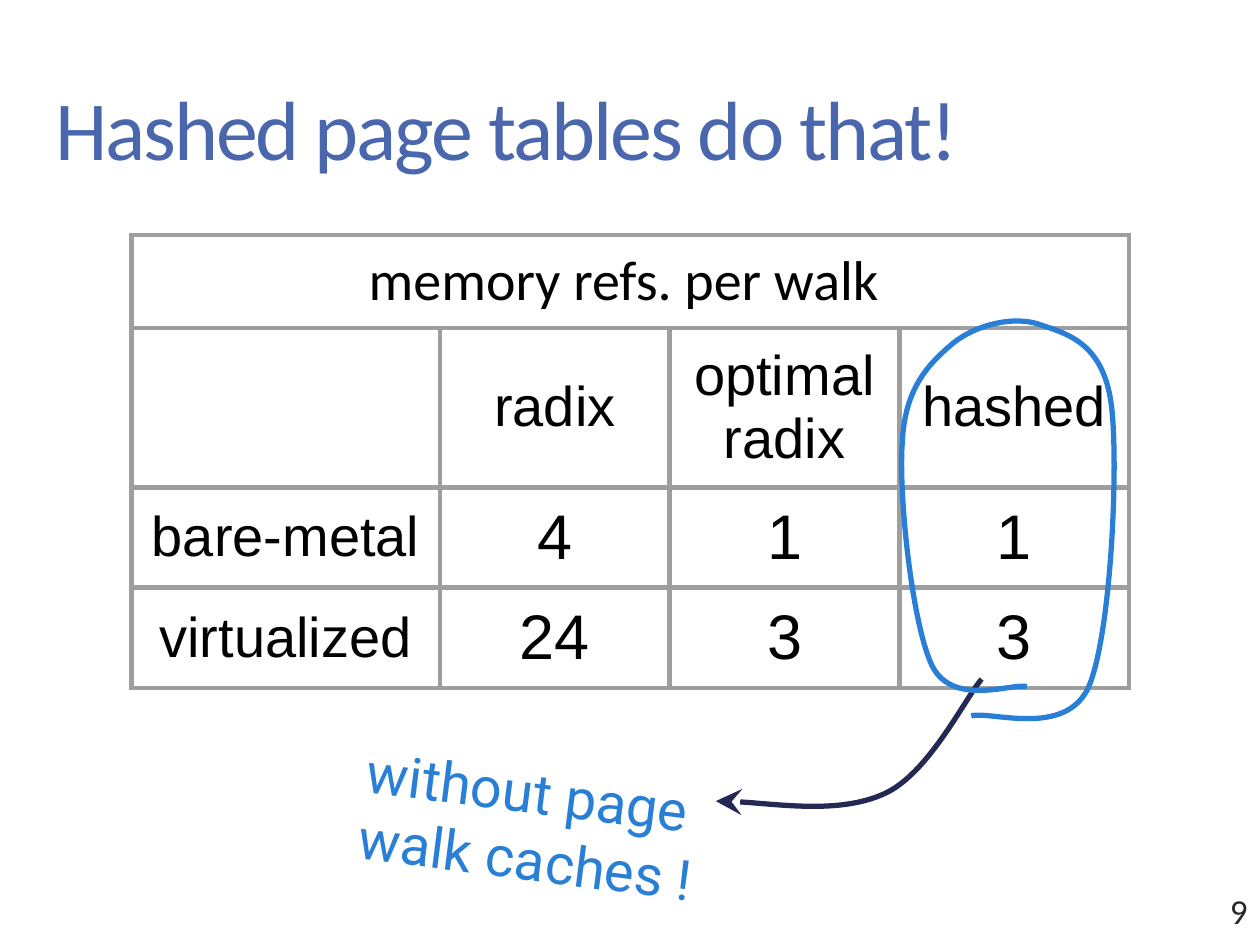
from lxml import etree
from pptx import Presentation
from pptx import util as u
from pptx.dml.color import RGBColor
from pptx.enum import text
from pptx.oxml import ns

CENTER, RIGHT = text.PP_ALIGN.CENTER, text.PP_ALIGN.RIGHT
MIDDLE = text.MSO_ANCHOR.MIDDLE
BLUE, NAVY, GREY = "297FD5", "242852", "9E9E9E"
INSET = u.Cm(0.25)


def write(frame, lines, size, font="Calibri", colour="000000", align=None,
          line_spacing=None, tracking=None):
    """Fill a text frame, one paragraph per line; tracking is in 1/100 pt."""
    frame.word_wrap = True
    for index, line in enumerate(lines.split("\n")):
        paragraph = frame.add_paragraph() if index else frame.paragraphs[0]
        paragraph.alignment = align
        paragraph.line_spacing = line_spacing
        run = paragraph.add_run()
        run.text = line
        run.font.size = u.Pt(size)
        run.font.name = font
        run.font.color.rgb = RGBColor.from_string(colour)
        if tracking:
            run.font._element.set("spc", str(tracking))


def draw_curve(shapes, points, colour):
    """Draw an open Bezier line: a start, then three points per segment, in cm."""
    grid = [(round(x * 100), round(y * 100)) for x, y in points]
    builder = shapes.build_freeform(*grid[0], scale=u.Cm(0.01))
    builder.add_line_segments(grid[1:], close=False)
    shape = builder.convert_to_shape()
    outline = next(shape._element.iter(ns.qn("a:path")))
    lines = outline.findall(ns.qn("a:lnTo"))
    for first in range(0, len(lines), 3):
        curve = etree.SubElement(outline, ns.qn("a:cubicBezTo"))
        for line in lines[first:first + 3]:
            curve.append(line[0])
            outline.remove(line)
    shape.shadow.inherit = False
    shape.fill.background()
    shape.line.color.rgb = RGBColor.from_string(colour)
    shape.line.width = u.Pt(3)
    return shape


presentation = Presentation()
presentation.slide_width, presentation.slide_height = u.Cm(25.4), u.Cm(19.05)
slide = presentation.slides.add_slide(presentation.slide_layouts[6])
shapes = slide.shapes

# Slide number and title
number = shapes.add_textbox(u.Cm(23.83), u.Cm(17.81), u.Cm(1.57), u.Cm(1.12))
write(number.text_frame, "9", 20, colour="262626", align=RIGHT)

title = shapes.add_textbox(u.Cm(0.86), u.Cm(1.52), u.Cm(23.67), u.Cm(2.26))
title.text_frame.margin_top = INSET
write(title.text_frame, "Hashed page tables do that!", 48, colour="4A66AC",
      line_spacing=0.9, tracking=-120)

# Table of memory references
rows = [
    ["memory refs. per walk ", "", "", ""],
    ["", "radix", "optimal radix", "hashed"],
    ["bare-metal", "4", "1", "1"],
    ["virtualized", "24", "3", "3"],
]
table = shapes.add_table(4, 4, u.Cm(2.65), u.Cm(4.74), u.Cm(20.1), u.Cm(8.8)).table
table.first_row = table.horz_banding = False
for column, width in zip(table.columns, (6.22, 4.63, 4.63, 4.63)):
    column.width = u.Cm(width)
for row, height in zip(table.rows, (1.87, 3.05, 1.93, 1.93)):
    row.height = u.Cm(height)
table.cell(0, 0).merge(table.cell(0, 3))

for r, values in enumerate(rows):
    for c, value in enumerate(values):
        cell = table.cell(r, c)
        cell.vertical_anchor = MIDDLE
        cell.margin_left = cell.margin_right = INSET
        cell.margin_top = cell.margin_bottom = INSET
        properties = cell._tc.get_or_add_tcPr()
        for side in ("lnL", "lnR", "lnT", "lnB"):
            border = etree.SubElement(properties, ns.qn(f"a:{side}"), w=str(u.Pt(3)))
            fill = etree.SubElement(border, ns.qn("a:solidFill"))
            etree.SubElement(fill, ns.qn("a:srgbClr"), val=GREY)
        cell.fill.background()
        if value:
            write(cell.text_frame, value, 36 if value.isdigit() else 32,
                  font="Arial" if r else "Calibri", align=CENTER)

# Handwritten remark, its arrow and the loop around the hashed column
remark = shapes.add_textbox(u.Cm(7.06), u.Cm(15.04), u.Cm(7.72), u.Cm(2.97))
remark.rotation = 7.2
remark.text_frame.margin_top = INSET
write(remark.text_frame, "without page\nwalk caches !", 32, font="Roboto", colour=BLUE)

arrow = draw_curve(shapes, [
    (19.79, 13.69),
    (19.46, 14.07), (18.72, 15.6), (17.83, 16),
    (16.94, 16.41), (14.99, 16.13), (14.43, 16.15),
], NAVY)
etree.SubElement(arrow.line._get_or_add_ln(), ns.qn("a:tailEnd"),
                 type="stealth", w="lg", len="lg")

draw_curve(shapes, [
    (20.7, 13.84),
    (20.4, 13.77), (19.23, 14.25), (18.8, 13.44),
    (18.39, 12.62), (18.11, 9.98), (18.19, 8.92),
    (18.24, 7.82), (18.72, 7.34), (19.2, 6.93),
    (19.66, 6.55), (20.45, 6.35), (20.98, 6.55),
    (21.51, 6.73), (22.23, 6.91), (22.4, 8.13),
    (22.56, 9.32), (22.4, 12.78), (21.95, 13.84),
    (21.49, 14.88), (19.99, 14.33), (19.58, 14.43),
], BLUE)

presentation.save("out.pptx")
